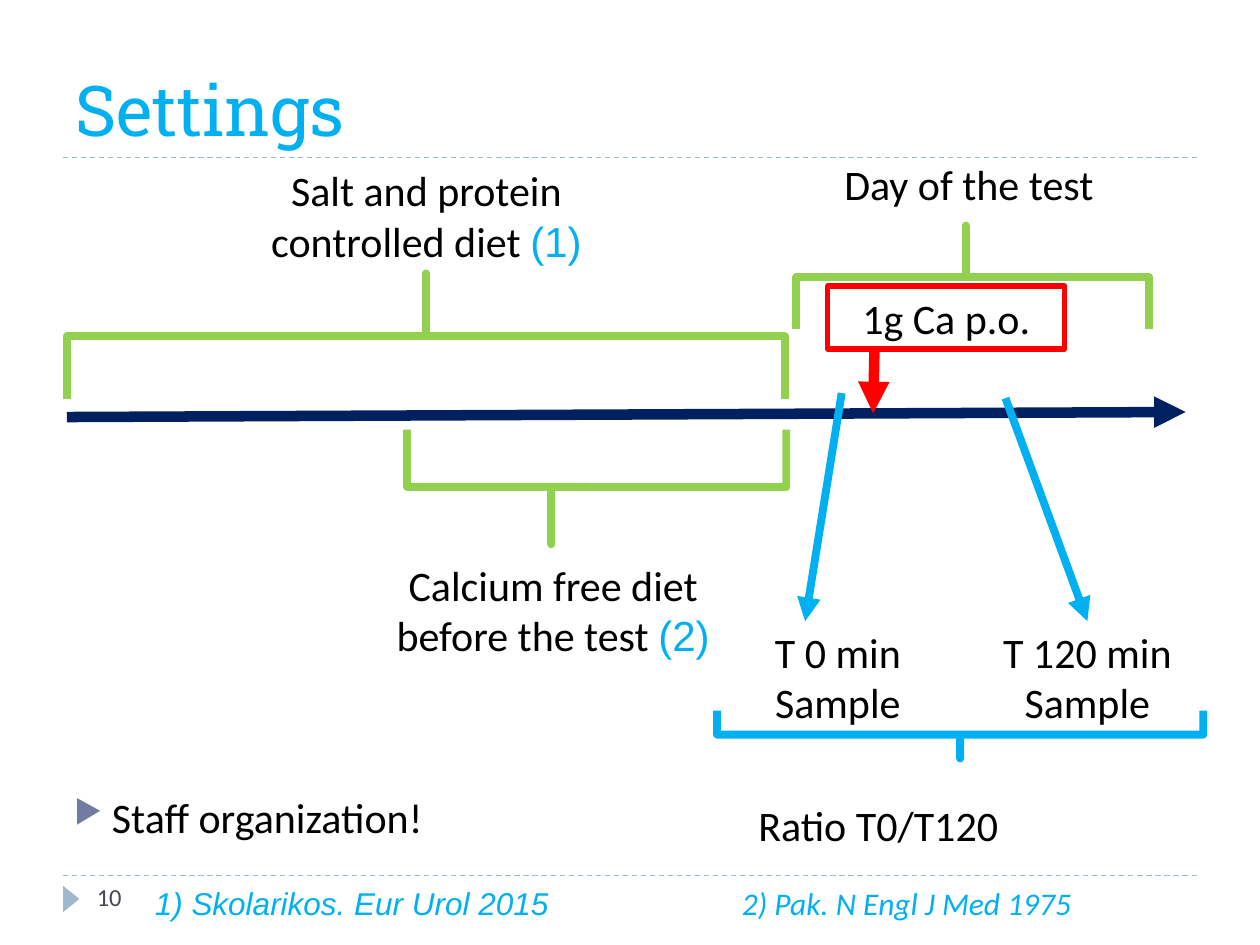
import dataclasses

import lxml.etree
import pptx
import pptx.dml.color
import pptx.enum.dml
import pptx.enum.shapes
import pptx.enum.text
import pptx.oxml.ns
import pptx.util

RGBColor = pptx.dml.color.RGBColor
Shape = pptx.enum.shapes.MSO_SHAPE
Align = pptx.enum.text.PP_ALIGN
BLACK = RGBColor(0x00, 0x00, 0x00)
SKY = RGBColor(0x00, 0xB0, 0xF0)
NAVY = RGBColor(0x00, 0x20, 0x60)
GREEN = RGBColor(0x92, 0xD0, 0x50)
RED = RGBColor(0xFF, 0x00, 0x00)
MIST = RGBColor(0x9F, 0xB8, 0xCD)
SLATE = RGBColor(0x46, 0x46, 0x53)
CELL = pptx.util.Inches(0.1)
COLUMNS, ROWS = 100, 75


@dataclasses.dataclass
class Box:
    """An area measured in grid columns and rows."""
    left: float
    top: float
    width: float
    height: float

    def inner(self, left, top, width, height):
        """Return an area whose corner is counted from this one."""
        return Box(self.left + left, self.top + top, width, height)

    def turned(self):
        """Return the frame that fills this area after a quarter turn."""
        return Box(self.left + (self.width - self.height) / 2,
                   self.top + (self.height - self.width) / 2,
                   self.height, self.width)

    def lengths(self):
        """Return left, top, width and height as slide lengths."""
        return [round(n * CELL) for n in dataclasses.astuple(self)]


def add_child(parent, tag, **attributes):
    """Append a drawing element and return it."""
    child = lxml.etree.SubElement(parent, pptx.oxml.ns.qn(tag))
    for name, value in attributes.items():
        child.set(name, value)
    return child


def before_font(para, tag, **attributes):
    """Add a paragraph property ahead of the paragraph font."""
    properties = para._p.get_or_add_pPr()
    child = add_child(properties, tag, **attributes)
    properties.find(pptx.oxml.ns.qn("a:defRPr")).addprevious(child)
    return child


def write(shape, lines, size=24, face="Calibri", color=BLACK, align=Align.CENTER):
    """Fill a shape with paragraphs of one font and return the last."""
    frame = shape.text_frame
    frame.word_wrap = True
    for number, line in enumerate(lines):
        para = frame.paragraphs[0] if number == 0 else frame.add_paragraph()
        para.alignment = align
        para.font.size = pptx.util.Pt(size)
        para.font.name = face
        para.font.color.rgb = color
        para.add_run().text = line
    return para


def add_text(page, box, lines, **style):
    """Add a text box and return its last paragraph."""
    return write(page.shapes.add_textbox(*box.lengths()), lines, **style)


def add_span(para, text, face, color):
    """Add a run with a font of its own."""
    span = para.add_run()
    span.text = text
    span.font.name = face
    span.font.color.rgb = color


def add_line(page, box, start, end, color, width, arrow=True):
    """Draw a solid arrow or a dashed rule between two points of a box."""
    points = [round(n * CELL) for n in (
        box.left + start[0], box.top + start[1], box.left + end[0], box.top + end[1])]
    line = page.shapes.add_connector(pptx.enum.shapes.MSO_CONNECTOR.STRAIGHT, *points)
    line.line.color.rgb = color
    line.line.width = pptx.util.Pt(width)
    if arrow:
        add_child(line.line._get_or_add_ln(), "a:tailEnd", type="triangle")
    else:
        line.line.dash_style = pptx.enum.dml.MSO_LINE.DASH
    add_child(line._element.spPr, "a:effectLst")


def add_outline(page, kind, box, color, width):
    """Add an unfilled shape."""
    shape = page.shapes.add_shape(kind, *box.lengths())
    shape.shadow.inherit = False
    shape.fill.background()
    shape.line.color.rgb = color
    shape.line.width = pptx.util.Pt(width)
    return shape


def add_brace(page, box, color, tip=0.5, up=False):
    """Add a square brace whose tip sits at a share of its width."""
    brace = add_outline(page, Shape.RIGHT_BRACE, box.turned(), color, 4.5)
    brace.rotation = 270 if up else 90
    brace.adjustments[0] = 0
    brace.adjustments[1] = tip if up else 1 - tip


def add_header(page, box):
    """Place the title above its rule."""
    title = page.shapes.add_textbox(*box.inner(0, 0, 86.2, 9.7).lengths())
    title.text_frame.vertical_anchor = pptx.enum.text.MSO_ANCHOR.BOTTOM
    write(title, ["Settings"], size=40, face="Roboto Slab", color=SKY, align=Align.LEFT)
    add_line(page, box, (0, box.height), (box.width, box.height), MIST, 0.75, arrow=False)


def add_diet(page, box, label, text, reference, tip, up):
    """Place a diet period and its referenced label."""
    add_brace(page, box, GREEN, tip, up)
    para = add_text(page, label, [text])
    add_span(para, reference, "Arial", SKY)


def add_test_day(page, box):
    """Place the test day with the calcium intake."""
    add_text(page, box.inner(0, 0, 32, 5), ["Day of the test"])
    add_brace(page, box.inner(2.3, 5.8, 28, 8.2), GREEN, 0.48, up=True)
    dose = add_outline(page, Shape.RECTANGLE, box.inner(4.8, 10.6, 18.8, 5), RED, 3)
    write(dose, ["1g Ca p.o."])
    add_line(page, box, (8.5, 15.7), (8.4, 20.7), RED, 6)


def add_samples(page, box):
    """Place the two samples, their arrows and their ratio."""
    add_line(page, box, (10.6, 0), (7.7, 18.1), SKY, 4.5)
    add_line(page, box, (23.6, 0.4), (30.1, 18.1), SKY, 4.5)
    for time, left in (("T 0 min", 0), ("T 120 min", 19.8)):
        add_text(page, box.inner(left, 18, 20.6, 9.1), [time, "Sample"])
    add_brace(page, box.inner(0.7, 25.2, 38.6, 3.8), SKY)
    add_text(page, box.inner(3, 31.8, 37.6, 5), ["Ratio T0/T120"], align=Align.LEFT)


def add_staff_note(page, box):
    """Place the bulleted remark."""
    para = add_text(page, box, ["Staff organization!"], align=Align.LEFT)
    para.space_before = pptx.util.Pt(6)
    indent = pptx.util.Inches(0.3)
    properties = para._p.get_or_add_pPr()
    properties.set("marL", str(indent))
    properties.set("indent", str(-indent))
    add_child(before_font(para, "a:buClr"), "a:srgbClr", val="727CA3")
    before_font(para, "a:buSzPct", val="76000")
    before_font(para, "a:buChar", char="▶")


def add_footer(page, box):
    """Place the rule, page number and references."""
    add_line(page, box, (0, 0), (box.width, 0), MIST, 0.75, arrow=False)
    marker = page.shapes.add_shape(
        Shape.ISOSCELES_TRIANGLE, *box.inner(0, 0.8, 1.3, 2.1).turned().lengths())
    marker.shadow.inherit = False
    marker.rotation = 90
    marker.fill.solid()
    marker.fill.fore_color.rgb = MIST
    marker.line.fill.background()
    add_text(page, box.inner(1.7, 0, 21.7, 4), ["10"], size=14, color=SLATE, align=Align.LEFT)
    para = add_text(page, box.inner(6.3, 0.2, 85.5, 4), ["1) Skolarikos. Eur Urol 2015\t"],
                    size=18, face="Arial", color=SKY, align=Align.LEFT)
    para.font.italic = True
    add_span(para, "2) Pak. N Engl J Med 1975", "Calibri", SKY)
    stop = str(pptx.util.Inches(4.66))
    add_child(before_font(para, "a:tabLst"), "a:tab", pos=stop, algn="l")


def main():
    """Build and save the deck."""
    deck = pptx.Presentation()
    deck.slide_width, deck.slide_height = COLUMNS * CELL, ROWS * CELL
    page = deck.slides.add_slide(deck.slide_layouts[6])
    add_header(page, Box(5, 2.7, 90, 9.8))
    add_line(page, Box(5.3, 32.7, 88.8, 0.4), (0, 0.4), (88.8, 0), NAVY, 6)
    add_diet(page, Box(32.3, 34.1, 30.1, 9.1), Box(27.9, 43.9, 32, 9.1),
             "Calcium free diet before the test ", "(2)", 0.38, up=False)
    add_diet(page, Box(5.3, 21.7, 57, 10), Box(19.5, 12.6, 28.7, 9.1),
             "Salt and protein controlled diet ", "(1)", 0.5, up=True)
    add_test_day(page, Box(60.9, 12.1, 32, 21))
    add_samples(page, Box(56.2, 31.2, 40.6, 37))
    add_staff_note(page, Box(4.9, 62.3, 36.9, 7.1))
    add_footer(page, Box(5, 69.5, 90, 4.2))
    deck.save("out.pptx")


if __name__ == "__main__":
    main()
